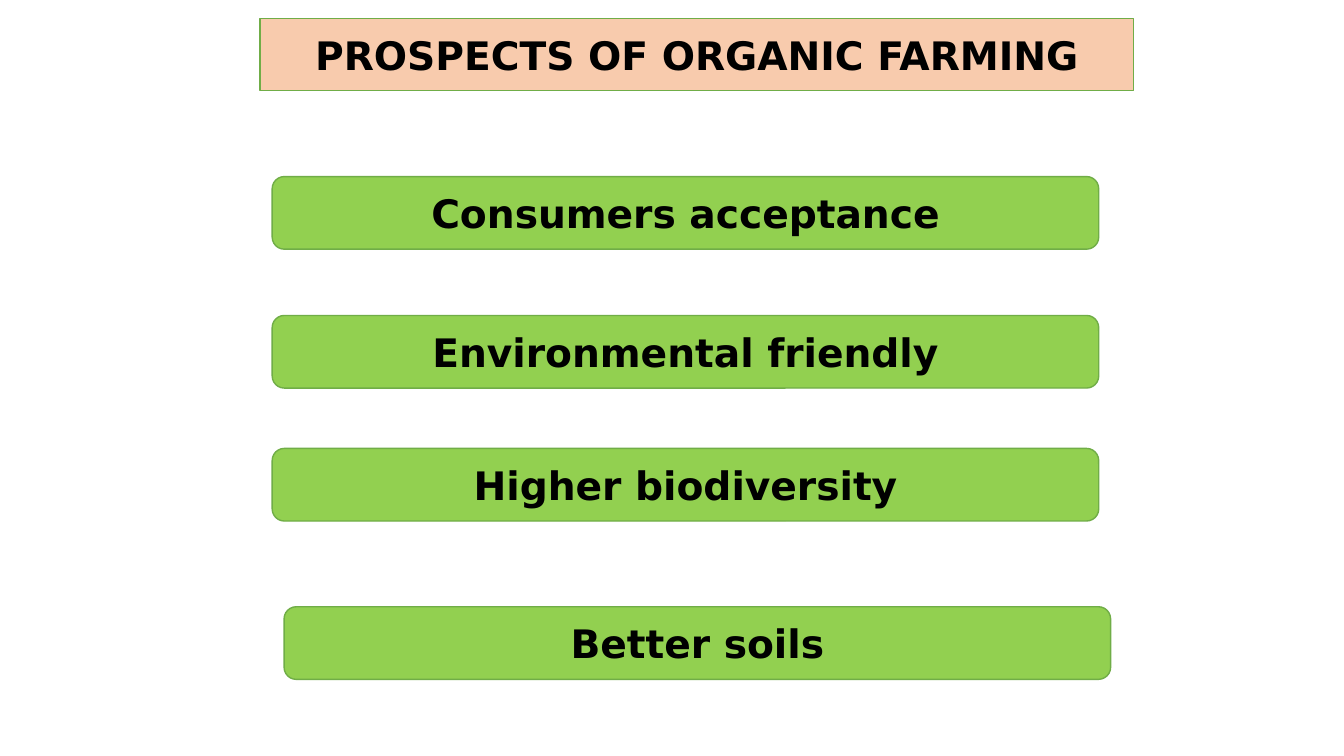
from pptx import Presentation
from pptx.dml.color import RGBColor
from pptx.enum import shapes, text
from pptx.util import Cm, Pt

# Content: wording, left and top in cm
title = ("PROSPECTS OF ORGANIC FARMING", 6.55, 0.46)
prospects = [
    ("Consumers acceptance", 6.86, 4.45),
    ("Environmental friendly", 6.86, 7.95),
    ("Higher biodiversity", 6.86, 11.3),
    ("Better soils", 7.16, 15.29),
]
title_width, bar_width, height = 22.02, 20.83, 1.83

theme = {
    "peach": RGBColor.from_string("F8CBAD"),
    "green": RGBColor.from_string("92D050"),
    "edge": RGBColor.from_string("70AD47"),
    "ink": RGBColor.from_string("000000"),
    "font": "DejaVu Sans",
    "size": Pt(28),
    "line": Pt(1),
}


def add_box(slide, kind, item, width, fill):
    words, left, top = item
    box = slide.shapes.add_shape(kind, Cm(left), Cm(top), Cm(width), Cm(height))
    box.shadow.inherit = False
    box.fill.solid()
    box.fill.fore_color.rgb = fill
    box.line.color.rgb = theme["edge"]
    box.line.width = theme["line"]
    frame = box.text_frame
    frame.text = words
    frame.word_wrap = True
    frame.vertical_anchor = text.MSO_ANCHOR.MIDDLE
    line = frame.paragraphs[0]
    line.alignment = text.PP_ALIGN.CENTER
    font = line.runs[0].font
    font.name, font.size, font.bold = theme["font"], theme["size"], True
    font.color.rgb = theme["ink"]


def main():
    deck = Presentation()
    deck.slide_width, deck.slide_height = Cm(33.87), Cm(19.05)
    slide = deck.slides.add_slide(deck.slide_layouts[6])

    # Title banner
    add_box(slide, shapes.MSO_SHAPE.RECTANGLE, title, title_width, theme["peach"])

    # Prospect bars
    for item in prospects:
        add_box(slide, shapes.MSO_SHAPE.ROUNDED_RECTANGLE, item, bar_width,
                theme["green"])

    deck.save("out.pptx")


if __name__ == "__main__":
    main()
